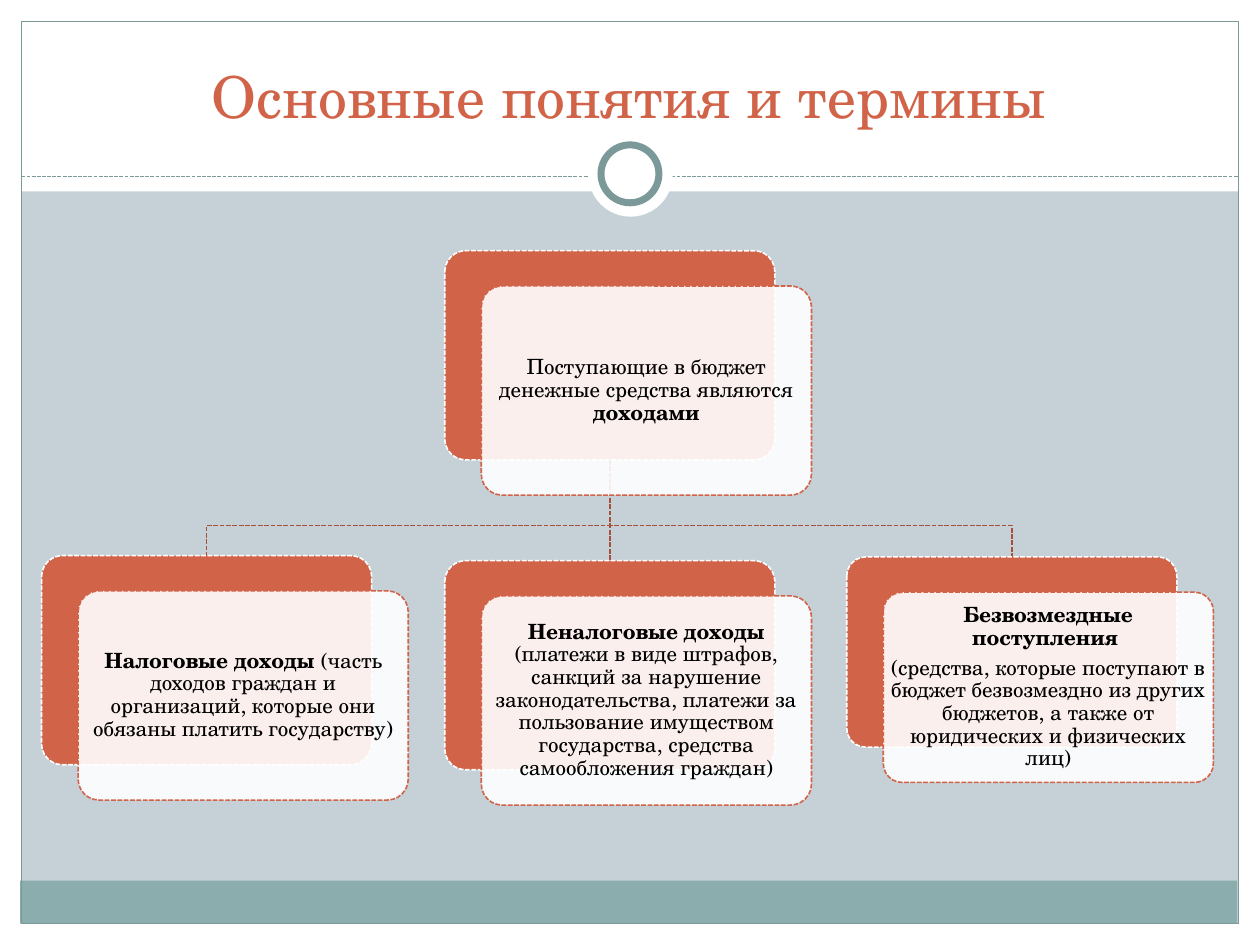
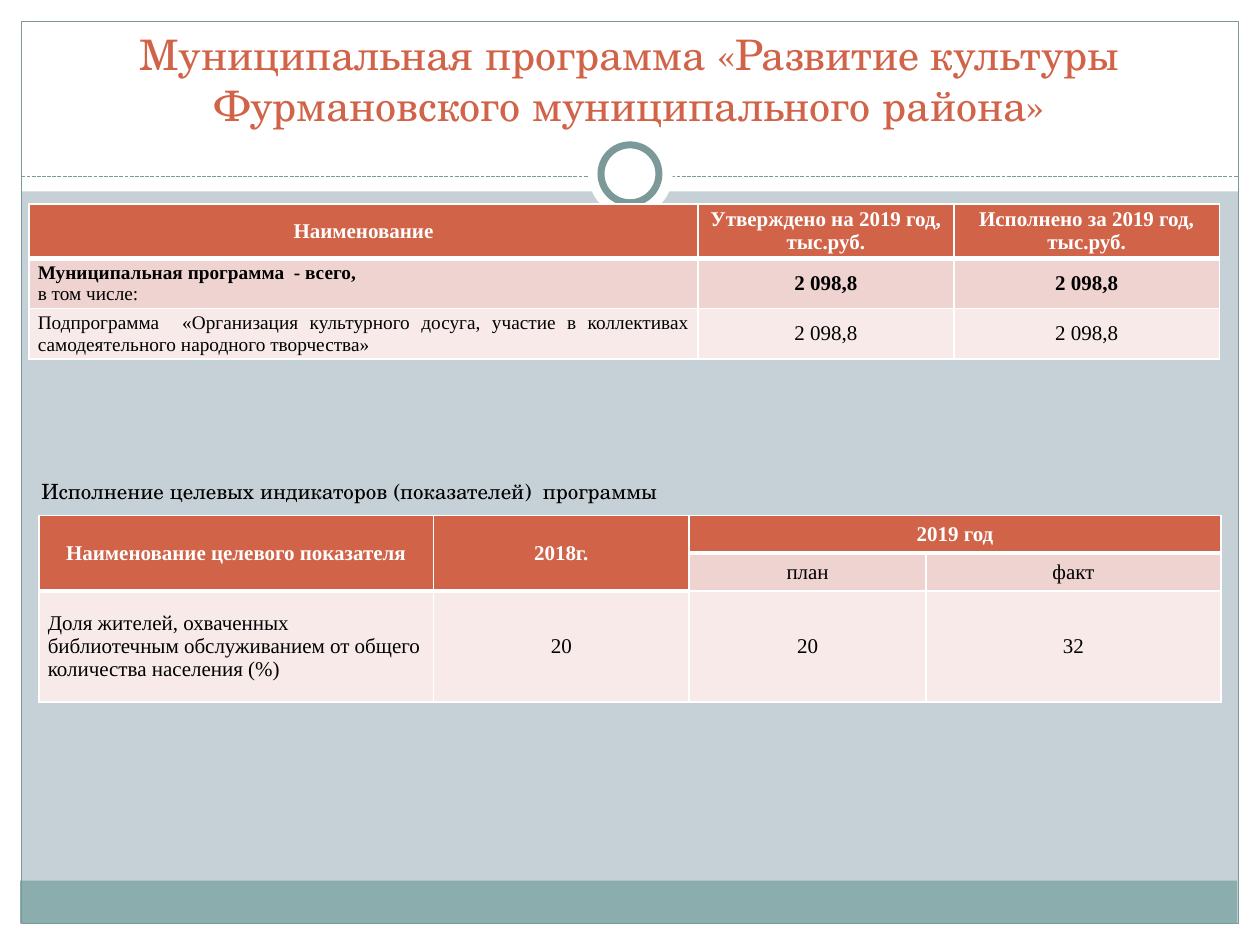
from lxml import etree
from pptx import Presentation
from pptx.dml.color import RGBColor
from pptx.enum.dml import MSO_LINE
from pptx.enum.shapes import MSO_CONNECTOR, MSO_SHAPE
from pptx.enum.text import MSO_ANCHOR as ANCHOR, MSO_AUTO_SIZE, PP_ALIGN as ALIGN
from pptx.oxml.ns import qn
from pptx.util import Inches, Pt

WHITE = RGBColor(0xFF, 0xFF, 0xFF)
BLACK = RGBColor(0, 0, 0)
GROUND = RGBColor(0xC5, 0xD1, 0xD7)
BAND = RGBColor(0x8C, 0xAD, 0xAE)
FRAME = RGBColor(0x7C, 0x99, 0x9A)
ACCENT = RGBColor(0xD1, 0x63, 0x49)
BRANCH = RGBColor(0xA7, 0x4F, 0x3A)
ROW_TINTS = [RGBColor(0xF7, 0xEA, 0xE9), RGBColor(0xEE, 0xD3, 0xD0)]

SERIF = "TeX Gyre Schola"
TABLE_FONT = "Times New Roman"

CARD_W = 2.62
CARD_H = 1.66
CARD_SHIFT = (0.29, 0.28)


def write(tf, paras, size=12, color=BLACK, font=SERIF, bold=False,
          align=ALIGN.LEFT, leading=None, after=None):
    """Segments between asterisks are bold."""
    for i, text in enumerate([paras] if isinstance(paras, str) else paras):
        p = tf.add_paragraph() if i else tf.paragraphs[0]
        p.alignment = align
        p.line_spacing = leading
        p.space_after = after
        for k, part in enumerate(text.split("*")):
            if part:
                r = p.add_run()
                r.text = part
                r.font.name = font
                r.font.size = Pt(size)
                r.font.bold = bold or k % 2 == 1
                r.font.color.rgb = color


def header(text, rows=1, cols=1):
    return dict(text=text, header=True, rows=rows, cols=cols)


def body(text, **fmt):
    return dict(text=text, header=False, rows=1, cols=1, **fmt)


class Deck:
    def __init__(self):
        self.prs = Presentation()
        self.prs.slide_width, self.prs.slide_height = Inches(10), Inches(7.5)
        self.layout = self.prs.slide_layouts[5]
        self.slide = None
        self.prepare_layout()

    def prepare_layout(self):
        fill = self.layout.background.fill
        fill.solid()
        fill.fore_color.rgb = GROUND
        for sp in list(self.layout.placeholders):
            if sp.placeholder_format.idx:
                sp.element.getparent().remove(sp.element)
            else:
                sp.left, sp.top = Inches(0.33), Inches(0.25)
                sp.width, sp.height = Inches(9.33), Inches(0.83)

    def new_slide(self, title, size):
        self.slide = self.prs.slides.add_slide(self.layout)
        tf = self.slide.shapes.title.text_frame
        tf.auto_size = MSO_AUTO_SIZE.NONE
        tf.vertical_anchor = ANCHOR.BOTTOM
        write(tf, title, size=size, color=ACCENT, align=ALIGN.CENTER)

    def move_to_layout(self, shapes):
        for sp in shapes:
            self.layout.shapes.element.append(sp.element)

    def stroke(self, line, color, width, dashed=False):
        line.color.rgb = color
        line.width = Pt(width)
        if dashed:
            line.dash_style = MSO_LINE.SQUARE_DOT

    def shape(self, kind, x, y, w, h, fill=None, line=None, width=0.75, dashed=False):
        sp = self.slide.shapes.add_shape(kind, Inches(x), Inches(y), Inches(w), Inches(h))
        sp.shadow.inherit = False
        if fill is None:
            sp.fill.background()
        else:
            sp.fill.solid()
            sp.fill.fore_color.rgb = fill
        if line is None:
            sp.line.fill.background()
        else:
            self.stroke(sp.line, line, width, dashed)
        return sp

    def line(self, x1, y1, x2, y2, color, width):
        cn = self.slide.shapes.add_connector(
            MSO_CONNECTOR.STRAIGHT, Inches(x1), Inches(y1), Inches(x2), Inches(y2))
        self.stroke(cn.line, color, width, dashed=True)
        etree.SubElement(cn.element.spPr, qn("a:effectLst"))
        return cn

    def elbow(self, points, color, width):
        start, *rest = [(Inches(x), Inches(y)) for x, y in points]
        fb = self.slide.shapes.build_freeform(*start)
        fb.add_line_segments(rest, close=False)
        sp = fb.convert_to_shape()
        sp.shadow.inherit = False
        sp.fill.background()
        self.stroke(sp.line, color, width, dashed=True)

    def card(self, x, y, paras, height=CARD_H):
        dx, dy = CARD_SHIFT
        back, front = [
            self.shape(MSO_SHAPE.ROUNDED_RECTANGLE, left, top, CARD_W, height,
                       fill, line, 0.9, dashed=True)
            for left, top, fill, line in ((x, y, ACCENT, WHITE),
                                          (x + dx, y + dy, WHITE, ACCENT))]
        back.adjustments[0] = front.adjustments[0] = 0.1
        tint = front.element.spPr.find(qn("a:solidFill"))[0]
        etree.SubElement(tint, qn("a:alpha"), val="90000")
        tf = front.text_frame
        tf.word_wrap = True
        tf.vertical_anchor = ANCHOR.MIDDLE
        tf.margin_left = tf.margin_right = tf.margin_top = tf.margin_bottom = 0
        write(tf, paras, align=ALIGN.CENTER, leading=0.9, after=Pt(4.2))
        return back

    def text(self, x, y, w, h, paras, **fmt):
        tf = self.slide.shapes.add_textbox(
            Inches(x), Inches(y), Inches(w), Inches(h)).text_frame
        tf.word_wrap = True
        write(tf, paras, **fmt)

    def cell_borders(self, cell):
        tc_pr = cell._tc.get_or_add_tcPr()
        for side, width in (("L", 1), ("R", 1), ("T", 1), ("B", 3)):
            ln = etree.SubElement(tc_pr, qn("a:ln" + side), w=str(Pt(width)))
            fill = etree.SubElement(ln, qn("a:solidFill"))
            etree.SubElement(fill, qn("a:srgbClr"), val=str(WHITE))

    def paint_cell(self, cell, row, is_header):
        if is_header:
            self.cell_borders(cell)
        cell.fill.solid()
        cell.fill.fore_color.rgb = ACCENT if is_header else ROW_TINTS[row % 2]

    def table(self, x, y, widths, heights, rows):
        tbl = self.slide.shapes.add_table(
            len(heights), len(widths), Inches(x), Inches(y),
            Inches(sum(widths)), Inches(sum(heights))).table
        for col, w in zip(tbl.columns, widths):
            col.width = Inches(w)
        for row, h in zip(tbl.rows, heights):
            row.height = Inches(h)
        for i, row in enumerate(rows):
            for j, item in enumerate(row):
                if item:
                    self.fill_cell(tbl, i, j, **item)

    def fill_cell(self, tbl, i, j, text, header, rows, cols, **fmt):
        cell = tbl.cell(i, j)
        for r in range(i, i + rows):
            for c in range(j, j + cols):
                self.paint_cell(tbl.cell(r, c), r, header)
        if rows * cols > 1:
            cell.merge(tbl.cell(i + rows - 1, j + cols - 1))
        cell.vertical_anchor = ANCHOR.MIDDLE
        cell.margin_left = cell.margin_right = Inches(0.07)
        cell.margin_top = cell.margin_bottom = 0
        style = dict(font=TABLE_FONT, align=ALIGN.CENTER, bold=header,
                     color=WHITE if header else BLACK)
        write(cell.text_frame, text, **{**style, **fmt})


def draw_frame(deck):
    rect, oval = MSO_SHAPE.RECTANGLE, MSO_SHAPE.OVAL
    before = len(deck.slide.shapes)
    for box in ((0, 7.33, 10, 0.17), (0, 0, 10, 1.52),
                (0, 0, 0.17, 7.5), (9.83, 0, 0.17, 7.5)):
        deck.shape(rect, *box, fill=WHITE)
    deck.shape(rect, 0.16, 6.99, 9.66, 0.34, fill=BAND)
    deck.shape(rect, 0.17, 0.17, 9.66, 7.16, line=FRAME)
    deck.line(0.17, 1.4, 9.83, 1.4, FRAME, 0.75)
    deck.shape(oval, 4.67, 1.05, 0.67, 0.67, fill=WHITE)
    deck.shape(oval, 4.77, 1.15, 0.46, 0.46, fill=WHITE, line=FRAME, width=4)
    deck.move_to_layout(list(deck.slide.shapes)[before:])


def terms_slide(deck):
    deck.new_slide("Основные понятия и термины", 33)
    draw_frame(deck)
    mid, root_bottom, bend = 4.84, 3.65, 4.17
    for x, top in ((8.03, 4.42), (1.64, 4.41)):
        deck.elbow([(mid, root_bottom), (mid, bend), (x, bend), (x, top)], BRANCH, 0.9)
    trunk = deck.line(mid, root_bottom, mid, 4.45, BRANCH, 0.9)
    root = deck.card(3.53, 1.99,
                     "Поступающие в бюджет денежные средства являются *доходами*")
    deck.card(0.33, 4.41, "*Налоговые доходы *(часть доходов граждан и организаций, "
                          "которые они обязаны платить государству)")
    non_tax = deck.card(3.53, 4.45,
                        "*Неналоговые доходы *(платежи в виде штрафов, санкций за "
                        "нарушение законодательства, платежи за пользование имуществом "
                        "государства, средства самообложения граждан)")
    deck.card(6.72, 4.42, ["*Безвозмездные поступления *",
                           "(средства, которые поступают в бюджет безвозмездно из других "
                           "бюджетов, а также от юридических и физических лиц)"],
              height=1.51)
    trunk.begin_connect(root, 2)
    trunk.end_connect(non_tax, 0)


def culture_slide(deck):
    deck.new_slide("Муниципальная программа «Развитие культуры "
                   "Фурмановского муниципального района»", 24)
    deck.text(0.23, 3.75, 6.8, 0.5,
              "Исполнение целевых индикаторов (показателей)  программы")
    name = dict(size=11, align=ALIGN.JUSTIFY)
    deck.table(0.23, 1.62, [5.31, 2.03, 2.11], [0.43, 0.4, 0.4], [
        [header("Наименование"), header("Утверждено на 2019 год, тыс.руб."),
         header("Исполнено за 2019 год, тыс.руб.")],
        [body(["*Муниципальная программа  - всего, *", "в том числе:"], **name),
         body("*2 098,8*"), body("*2 098,8*")],
        [body("Подпрограмма  «Организация культурного досуга, участие в коллективах "
              "самодеятельного народного творчества»", **name),
         body("2 098,8"), body("2 098,8")],
    ])
    deck.table(0.31, 4.09, [3.13, 2.03, 1.88, 2.34], [0.3, 0.3, 0.88], [
        [header("Наименование целевого показателя", rows=2), header("2018г.", rows=2),
         header("2019 год", cols=2), None],
        [None, None, body("план"), body("факт")],
        [body("Доля жителей, охваченных библиотечным обслуживанием от общего "
              "количества населения (%)", align=ALIGN.LEFT),
         body("20"), body("20"), body("32")],
    ])


def main():
    deck = Deck()
    terms_slide(deck)
    culture_slide(deck)
    deck.prs.save("out.pptx")


if __name__ == "__main__":
    main()
